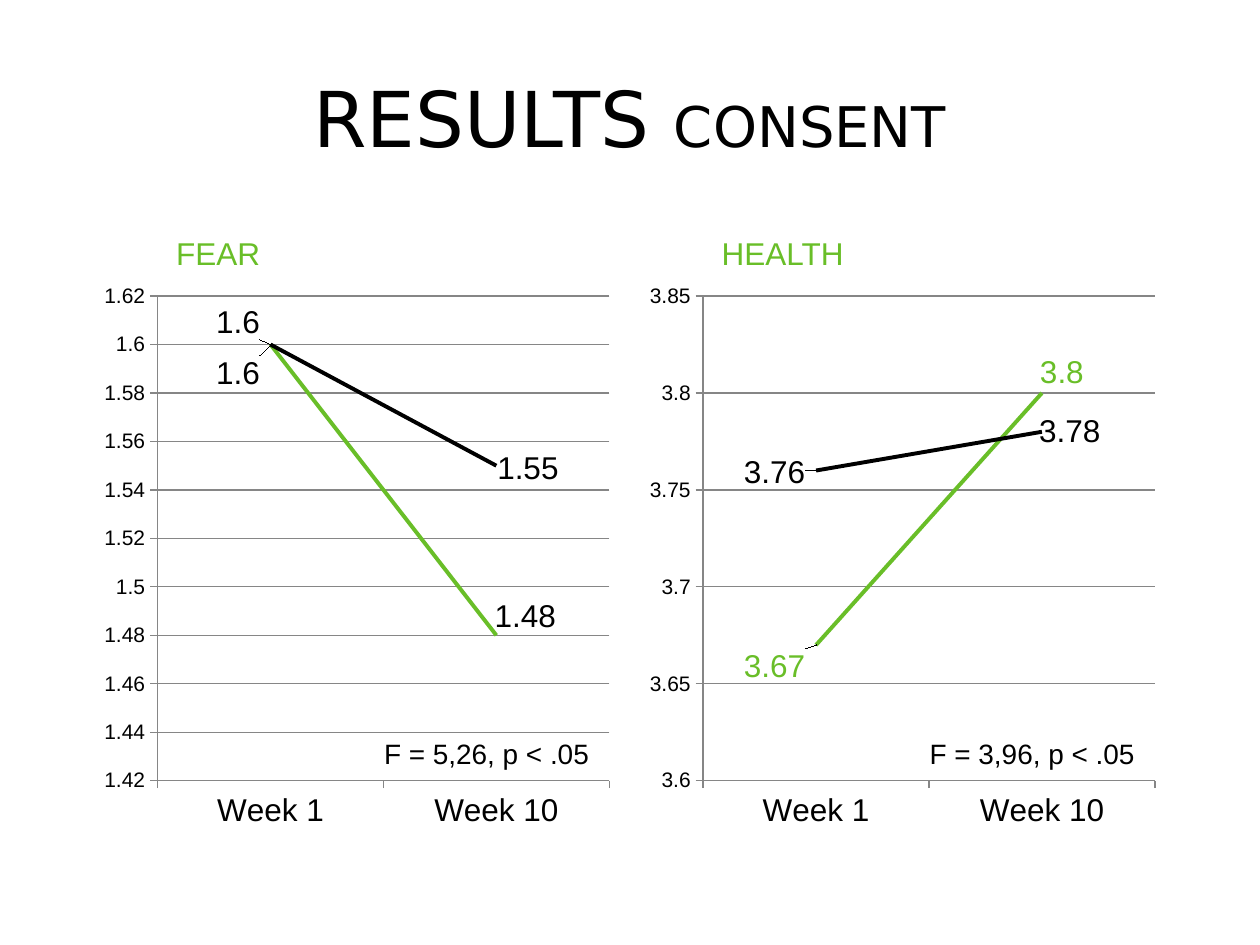
from lxml import etree
from pptx import Presentation
from pptx import util as u
from pptx.chart import data as chart_data
from pptx.dml import color
from pptx.enum import chart as ch, text
from pptx.oxml import ns

COLORS = {"green": "69BE28", "black": "000000", "grid": "868686"}
WEEKS = ["Week 1", "Week 10"]
CHART_SIZE = (4.17, 4.5)
PLOT_AREA = {"x": 0.12, "y": 0.04, "w": 0.86, "h": 0.855}

# Each series: name, colour, label colour, values, label offsets in inches
PANELS = [
    {"heading": "FEAR", "left": 0.75, "heading_width": 1.5,
     "note": "F = 5,26, p < .05", "scale": (1.42, 1.62, 0.02),
     "series": [
         ("Series 1", "green", "black", (1.6, 1.48), [(-0.26, 0.23), (0.23, -0.15)]),
         ("Series 2", "black", "black", (1.6, 1.55), [(-0.26, -0.18), (0.25, 0.02)])]},
    {"heading": "HEALTH", "left": 5.08, "heading_width": 3.86,
     "note": "F = 3,96, p < .05", "scale": (3.6, 3.85, 0.05),
     "series": [
         ("Series 1", "green", "green", (3.67, 3.8), [(-0.33, 0.17), (0.16, -0.16)]),
         ("Series 2", "black", "black", (3.76, 3.78), [(-0.33, 0.02), (0.22, 0)])]},
]


def set_font(font, size, color_name, name="Arial"):
    for key, value in {"name": name, "size": u.Pt(size), "bold": False}.items():
        setattr(font, key, value)
    font.color.rgb = color.RGBColor.from_string(COLORS[color_name])


def set_line(line, color_name, width):
    line.color.rgb = color.RGBColor.from_string(COLORS[color_name])
    line.width = u.Pt(width)


def manual_layout(values):
    layout = etree.Element(ns.qn("c:layout"))
    manual = etree.SubElement(layout, ns.qn("c:manualLayout"))
    for key, value in values.items():
        etree.SubElement(manual, ns.qn("c:" + key), val=str(value))
    return layout


def add_title(slide):
    title = slide.shapes.title
    box = {"left": 0.5, "top": 0.3, "width": 9, "height": 1.25}
    for key, value in box.items():
        setattr(title, key, u.Inches(value))
    title.text_frame.vertical_anchor = text.MSO_ANCHOR.MIDDLE
    paragraph = title.text_frame.paragraphs[0]
    paragraph.alignment = text.PP_ALIGN.CENTER
    for words, size in (("RESULTS ", 44), ("CONSENT", 32)):
        run = paragraph.add_run()
        run.text = words
        set_font(run.font, size, "black", "DejaVu Sans")


def add_label(slide, words, box, size, color_name):
    shape = slide.shapes.add_textbox(*map(u.Inches, box))
    shape.text_frame.word_wrap = True
    shape.text_frame.auto_size = text.MSO_AUTO_SIZE.SHAPE_TO_FIT_TEXT
    run = shape.text_frame.paragraphs[0].add_run()
    run.text = words
    set_font(run.font, size, color_name)


def format_axes(chart, scale):
    value_axis = chart.value_axis
    settings = dict(zip(("minimum_scale", "maximum_scale", "major_unit"), scale))
    for key, value in settings.items():
        setattr(value_axis, key, value)
    value_axis.has_major_gridlines = True
    set_line(value_axis.major_gridlines.format.line, "grid", 0.75)
    for axis, size in ((value_axis, 12), (chart.category_axis, 18)):
        axis.major_tick_mark = ch.XL_TICK_MARK.OUTSIDE
        set_line(axis.format.line, "grid", 0.75)
        set_font(axis.tick_labels.font, size, "black")


def format_series(series, line_color, label_color, offsets):
    series.smooth = False
    series.marker.style = ch.XL_MARKER_STYLE.NONE
    set_line(series.format.line, line_color, 2.25)
    labels = series.data_labels
    labels.show_value = True
    labels.position = ch.XL_LABEL_POSITION.CENTER
    set_font(labels.font, 18, label_color)
    for index in range(len(offsets)):
        label = series.points[index].data_label
        set_font(label.font, 18, label_color)
        label.position = ch.XL_LABEL_POSITION.CENTER
    # Move each label away from its point, as a share of the chart size
    label_elements = series._element.iter(ns.qn("c:dLbl"))
    for element, offset in zip(label_elements, offsets):
        x, y = (round(o / side, 3) for o, side in zip(offset, CHART_SIZE))
        element.find(ns.qn("c:idx")).addnext(manual_layout({"x": x, "y": y}))


def add_line_chart(slide, panel):
    data = chart_data.CategoryChartData()
    data.categories = WEEKS
    for name, _, _, values, _ in panel["series"]:
        data.add_series(name, values)
    box = map(u.Inches, (panel["left"], 2.17, *CHART_SIZE))
    chart = slide.shapes.add_chart(ch.XL_CHART_TYPE.LINE, *box, data).chart
    chart.has_legend = False
    chart.has_title = False
    set_font(chart.font, 18, "black")
    chart.plots[0].vary_by_categories = False
    format_axes(chart, panel["scale"])
    for series, (_, line, label, _, offsets) in zip(chart.plots[0].series, panel["series"]):
        format_series(series, line, label, offsets)

    # Fix the inner plot area
    plot_area = chart._chartSpace.find(".//" + ns.qn("c:plotArea"))
    for old in plot_area.findall(ns.qn("c:layout")):
        plot_area.remove(old)
    modes = {"layoutTarget": "inner", "xMode": "edge", "yMode": "edge"}
    plot_area.insert(0, manual_layout({**modes, **PLOT_AREA}))


def main():
    presentation = Presentation()
    presentation.slide_width = u.Inches(10)
    presentation.slide_height = u.Inches(7.5)
    slide = presentation.slides.add_slide(presentation.slide_layouts[5])
    add_title(slide)
    for panel in PANELS:
        add_line_chart(slide, panel)
    # Headings and test statistics
    for panel in PANELS:
        left = panel["left"]
        add_label(slide, panel["heading"], (left + 0.55, 1.81, panel["heading_width"], 0.4),
                  18, "green")
        add_label(slide, panel["note"], (left + 2.2, 5.8, 2.05, 0.37), 16, "black")
    presentation.save("out.pptx")


if __name__ == "__main__":
    main()
